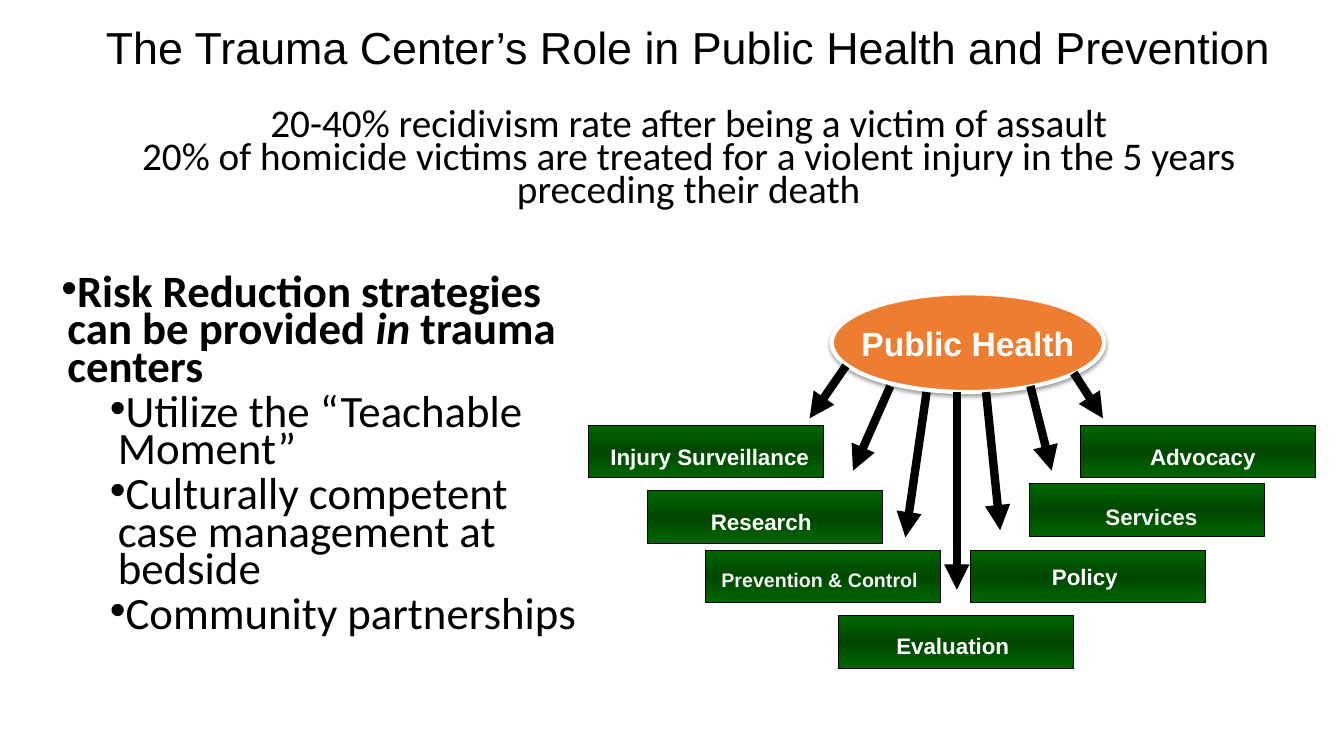
from copy import deepcopy

from lxml.etree import SubElement
from pptx import Presentation
from pptx.dml.color import RGBColor
from pptx.enum.shapes import MSO_CONNECTOR as Connector, MSO_SHAPE as Shape
from pptx.enum.text import MSO_ANCHOR as Anchor, PP_ALIGN as Align
from pptx.oxml.ns import qn
from pptx.util import Emu, Pt

PX = 9144  # EMU, 100 px to the inch
BLACK, WHITE, PALE = "000000", "FFFFFF", "F2F2F2"
ORANGE, GREEN, DARK_GREEN = "ED7D31", "006600", "004700"

TITLE = "The Trauma Center’s Role in Public Health and Prevention"
FACTS = ("20-40% recidivism rate after being a victim of assault\v"
         "20% of homicide victims are treated for a violent injury "
         "in the 5 years preceding their death")
STRATEGY = [("Risk Reduction strategies can be provided ", False),
            ("in", True), (" trauma centers", False)]
EXAMPLES = ["Utilize the “Teachable Moment”",
            "Culturally competent case management at bedside",
            "Community partnerships"]

HUB = ("Public Health", 825, 291, 270, 98)
BAR_SIZE, LABEL_WIDTH = (233, 52), 226
# label, bar left and top, label shift right and down, size, colour
BARS = [
    ("Injury Surveillance", 584, 422, 7, 13, 16, WHITE),
    ("Research", 642, 487, 0, 12, 16, WHITE),
    ("Prevention & Control", 700, 546, 0, 12, 14, PALE),
    ("Evaluation", 832, 611, 0, 11, 16, WHITE),
    ("Policy", 963, 546, 0, 8, 16, WHITE),
    ("Services", 1021, 480, 8, 14, 16, PALE),
    ("Advocacy", 1072, 422, 8, 13, 16, WHITE),
]
ARROWS = [
    (949, 389, 949, 585), (919, 389, 898, 533), (978, 389, 992, 526),
    (883, 383, 846, 467), (839, 363, 803, 415), (1022, 383, 1043, 467),
    (1065, 370, 1094, 415),
]


def px(*lengths):
    return [Emu(length * PX) for length in lengths]


def rgb(value):
    return RGBColor.from_string(value)


def set_font(font, name, size, color=BLACK, bold=False):
    font.name, font.size, font.bold = name, Pt(size), bold
    font.color.rgb = rgb(color)


def add_text(shapes, box, insets):
    frame = shapes.add_textbox(*px(*box)).text_frame
    frame.word_wrap = True
    (frame.margin_left, frame.margin_top,
     frame.margin_right, frame.margin_bottom) = px(*insets)
    return frame


def indent(para, left, first=0):
    props = para._p.get_or_add_pPr()
    props.set("marL", str(left * PX))
    props.set("indent", str(first * PX))
    return props


def add_bullet(para, left, first, percent):
    props = indent(para, left, first)
    color = SubElement(props, qn("a:buClr"))
    SubElement(color, qn("a:srgbClr"), val=BLACK)
    SubElement(props, qn("a:buSzPct"), val=str(percent * 1000))
    SubElement(props, qn("a:buFont"), typeface="Arial")
    SubElement(props, qn("a:buChar"), char="•")


def add_heading(page):
    # The deeper bottom inset lifts the middle-anchored text.
    frame = add_text(page.shapes, (32, 30, 1285, 216), (10, 10, 10, 43))
    frame.vertical_anchor = Anchor.MIDDLE
    title, facts = frame.paragraphs[0], frame.add_paragraph()
    for para, text, font, size, gap in ((title, TITLE, "Arial", 32, 5),
                                        (facts, FACTS, "Calibri", 28, 28)):
        para.text = text
        para.alignment, para.line_spacing = Align.CENTER, 0.7
        para.space_before = Pt(gap)
        set_font(para.font, font, size)
        indent(para, 17)


def add_strategies(page):
    frame = add_text(page.shapes, (32, 265, 552, 465), (10, 10, 10, 10))
    para = frame.paragraphs[0]
    for text, italic in STRATEGY:
        span = para.add_run()
        span.text, span.font.italic = text, italic
    para.line_spacing, para.space_before = 0.7, Pt(10)
    set_font(para.font, "Calibri", 32, bold=True)
    add_bullet(para, 25, -6, 100)
    for text in EXAMPLES:
        para = frame.add_paragraph()
        para.text, para.level = text, 1
        para.line_spacing, para.space_before = 0.7, Pt(5)
        set_font(para.font, "Calibri", 32)
        add_bullet(para, 75, -8, 101)


def add_hub(diagram):
    text, *box = HUB
    hub = diagram.shapes.add_shape(Shape.OVAL, *px(*box))
    hub.fill.solid()
    hub.fill.fore_color.rgb = rgb(ORANGE)
    hub.line.color.rgb, hub.line.width = rgb(WHITE), Pt(3)
    hub.shadow.inherit = False
    effects = hub._element.spPr.find(qn("a:effectLst"))
    shadow = SubElement(effects, qn("a:outerShdw"), blurRad=str(Pt(3.1)),
                        dist=str(Pt(1.6)), dir="5400000", rotWithShape="0")
    color = SubElement(shadow, qn("a:srgbClr"), val=BLACK)
    SubElement(color, qn("a:alpha"), val="38000")
    frame = hub.text_frame
    frame.word_wrap, frame.vertical_anchor = False, Anchor.MIDDLE
    para = frame.paragraphs[0]
    para.text, para.alignment = text, Align.CENTER
    set_font(para.font, "Arial", 24, WHITE, True)


def add_bar(diagram, text, left, top, right_shift, down_shift, size, color):
    bar = diagram.shapes.add_shape(Shape.RECTANGLE, *px(left, top, *BAR_SIZE))
    bar.shadow.inherit = False
    bar.line.color.rgb, bar.line.width = rgb(BLACK), Pt(0.75)
    bar.fill.gradient()
    bar.fill.gradient_angle = 90
    stop_list = bar._element.spPr.find(".//" + qn("a:gsLst"))
    stop_list.append(deepcopy(stop_list[0]))
    for stop, position, shade in zip(bar.fill.gradient_stops, (0, 0.5, 1),
                                     (GREEN, DARK_GREEN, GREEN)):
        stop.position, stop.color.rgb = position, rgb(shade)
    box = (left + right_shift, top + down_shift, LABEL_WIDTH, 31)
    para = add_text(diagram.shapes, box, (10, 5, 10, 5)).paragraphs[0]
    para.text, para.alignment = text, Align.CENTER
    set_font(para.font, "Arial", size, color, True)


def add_arrow(diagram, *ends):
    arrow = diagram.shapes.add_connector(Connector.STRAIGHT, *px(*ends))
    arrow.line.color.rgb, arrow.line.width = rgb(BLACK), Pt(6)
    SubElement(arrow.line._get_or_add_ln(), qn("a:tailEnd"), type="triangle")
    SubElement(arrow._element.spPr, qn("a:effectLst"))


def main():
    deck = Presentation()
    deck.slide_width, deck.slide_height = px(1333, 750)
    page = deck.slides.add_slide(deck.slide_layouts[6])
    add_heading(page)
    add_strategies(page)
    diagram = page.shapes.add_group_shape()
    add_hub(diagram)
    for bar in BARS:
        add_bar(diagram, *bar)
    for ends in ARROWS:
        add_arrow(diagram, *ends)
    deck.save("out.pptx")


if __name__ == "__main__":
    main()
